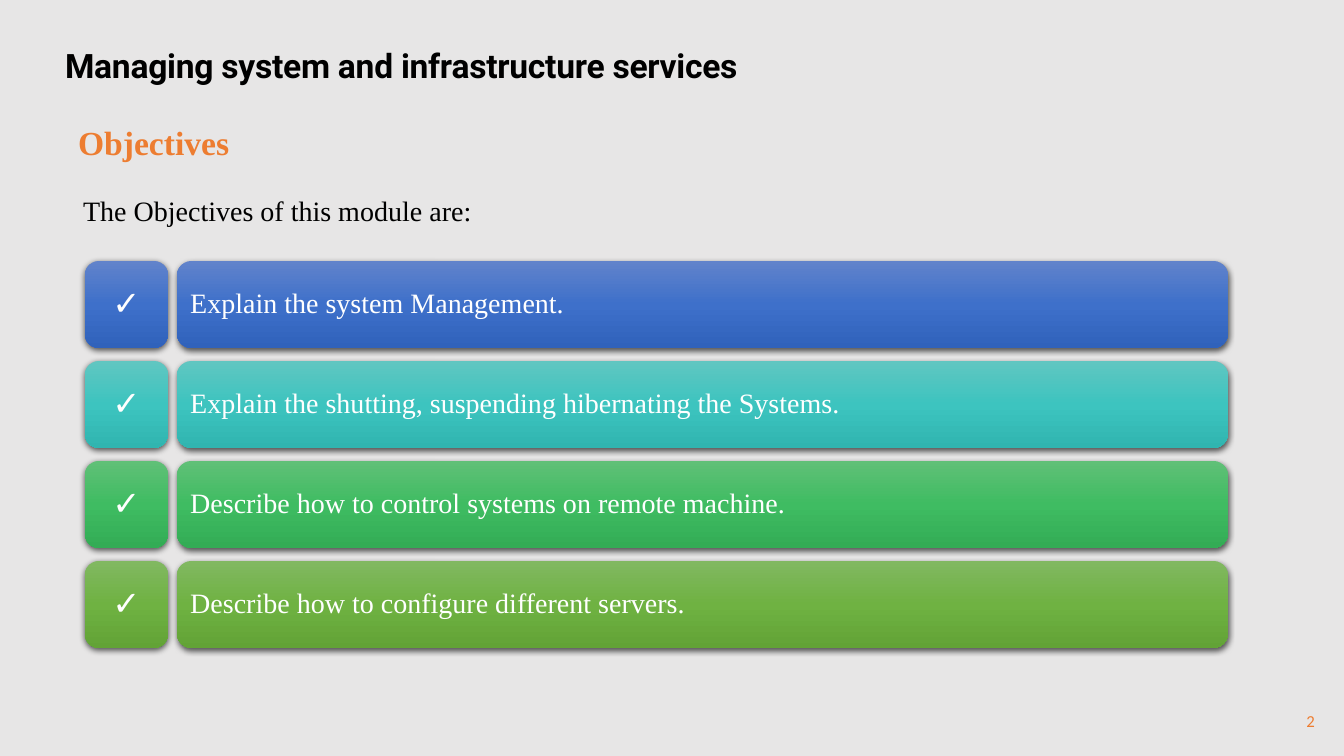
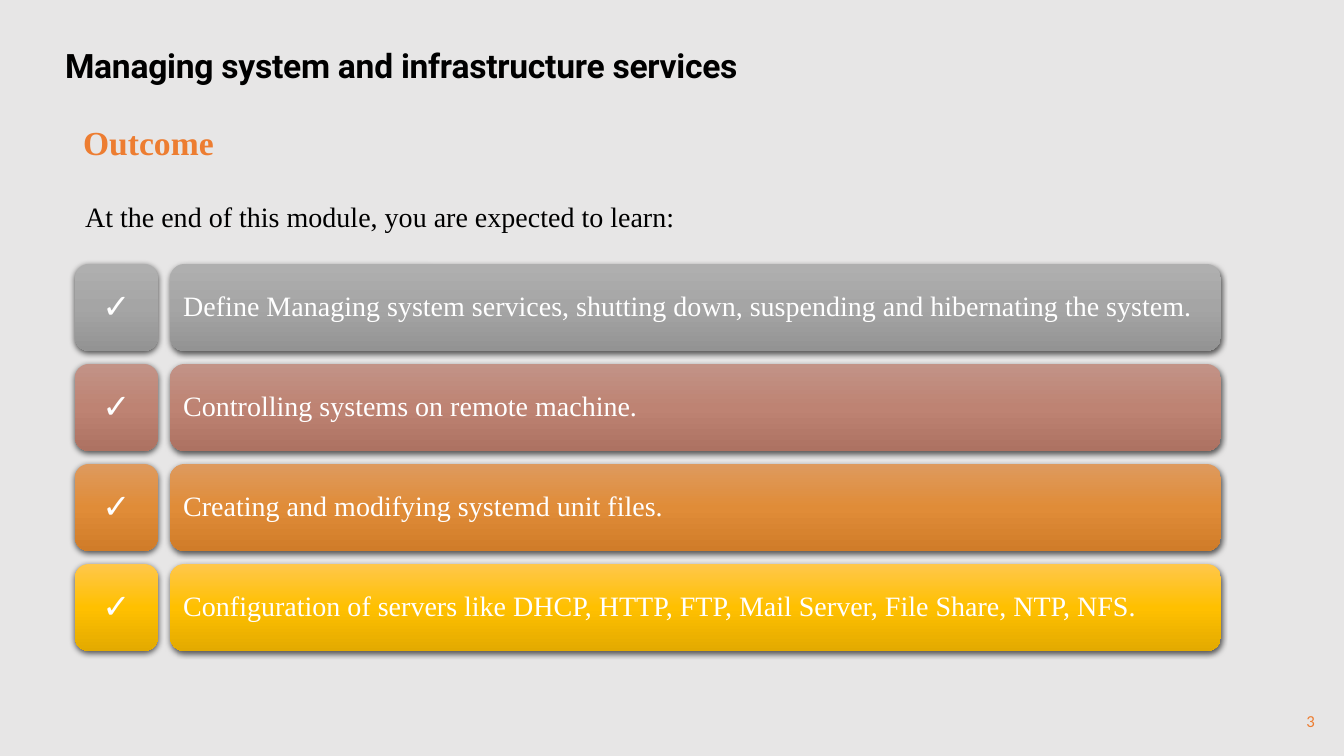
from copy import deepcopy
from dataclasses import dataclass

from lxml import etree
from pptx import Presentation
from pptx import util as u
from pptx.dml.color import RGBColor
from pptx.enum import shapes, text
from pptx.oxml.ns import qn

EMU_PER_PX = 12192000 / 1344
PAGE_WIDTH, PAGE_HEIGHT = 1344, 756
TWO_CONTENT_LAYOUT = 3

BACKGROUND = RGBColor(0xE7, 0xE6, 0xE6)
BLACK = RGBColor(0x00, 0x00, 0x00)
WHITE = RGBColor(0xFF, 0xFF, 0xFF)
ORANGE = RGBColor(0xED, 0x7D, 0x31)

TITLE = "Managing system and infrastructure services"
CHECK_MARK = "✓"
SERIF = "Times New Roman"

TILE_WIDTH, BAR_WIDTH = 83, 1051
ROW_HEIGHT, ROW_PITCH = 87, 100


@dataclass(frozen=True)
class Box:
    left: int
    top: int
    width: int
    height: int


@dataclass(frozen=True)
class TextStyle:
    name: str
    size: int
    color: RGBColor
    bold: bool = False
    align: text.PP_ALIGN = text.PP_ALIGN.LEFT
    anchor: text.MSO_ANCHOR = text.MSO_ANCHOR.TOP
    line_spacing: float = 1.0


@dataclass(frozen=True)
class Gradient:
    top: RGBColor
    middle: RGBColor
    bottom: RGBColor


@dataclass(frozen=True)
class Row:
    wording: str
    gradient: Gradient


@dataclass(frozen=True)
class Page:
    number: int
    heading: str
    heading_left: int
    intro: str
    intro_left: int
    intro_top: int
    tile_left: int
    bar_left: int
    rows_top: int
    rows: tuple[Row, ...]


TITLE_STYLE = TextStyle("Roboto", 24, BLACK, bold=True)
HEADING_STYLE = TextStyle(SERIF, 24, ORANGE, bold=True)
INTRO_STYLE = TextStyle(SERIF, 20, BLACK)
NUMBER_STYLE = TextStyle("Calibri", 12, ORANGE, align=text.PP_ALIGN.RIGHT,
                         anchor=text.MSO_ANCHOR.MIDDLE)
BAR_STYLE = TextStyle(SERIF, 20, WHITE, anchor=text.MSO_ANCHOR.MIDDLE,
                      line_spacing=0.9)
TILE_STYLE = TextStyle("Arial", 24, WHITE, bold=True, align=text.PP_ALIGN.CENTER,
                       anchor=text.MSO_ANCHOR.MIDDLE, line_spacing=0.9)


def gradient(top: str, middle: str, bottom: str) -> Gradient:
    return Gradient(*map(RGBColor.from_string, (top, middle, bottom)))


BLUE = gradient("6183CB", "3E70CA", "3062BB")
TEAL = gradient("60C6C1", "3DC4BF", "30B5B0")
GREEN = gradient("60C077", "3FBC62", "33AC55")
OLIVE = gradient("81B861", "6FB242", "62A336")
GREY = gradient("AFAFAF", "A5A5A5", "939393")
ROSE = gradient("C29387", "BE8373", "AD7262")
AMBER = gradient("DE9A5E", "E08C38", "D07C29")
GOLD = gradient("FFC74B", "FFC000", "E3AA00")

PAGES = (
    Page(2, "Objectives", 68, "The Objectives of this module are:", 73, 188,
         tile_left=85, bar_left=177, rows_top=261, rows=(
             Row("Explain the system Management.", BLUE),
             Row("Explain the shutting, suspending hibernating the Systems.", TEAL),
             Row("Describe how to control systems on remote machine.", GREEN),
             Row("Describe how to configure different servers.", OLIVE))),
    Page(3, "Outcome", 73,
         "At the end of this module, you are expected to learn:", 75, 194,
         tile_left=75, bar_left=170, rows_top=264, rows=(
             Row("Define Managing system services, shutting down, "
                 "suspending and hibernating the system.", GREY),
             Row("Controlling systems on remote machine.", ROSE),
             Row("Creating and modifying systemd unit files.", AMBER),
             Row("Configuration of servers like DHCP, HTTP, FTP, "
                 "Mail Server, File Share, NTP, NFS.", GOLD))),
)


def px(length: int) -> u.Emu:
    return u.Emu(round(length * EMU_PER_PX))


def bounds(box: Box) -> tuple[u.Emu, ...]:
    return px(box.left), px(box.top), px(box.width), px(box.height)


def place(shape, box: Box) -> None:
    shape.left, shape.top, shape.width, shape.height = bounds(box)


def write(shape, wording: str, style: TextStyle):
    """Fill the shape with one formatted, unbulleted paragraph and return it."""
    frame = shape.text_frame
    frame.word_wrap = True
    frame.auto_size = text.MSO_AUTO_SIZE.NONE
    frame.vertical_anchor = style.anchor
    frame.text = wording
    para = frame.paragraphs[0]
    properties = para._p.get_or_add_pPr()
    properties.set("marL", "0")
    properties.set("indent", "0")
    etree.SubElement(properties, qn("a:buNone"))
    para.alignment = style.align
    para.line_spacing = style.line_spacing
    para.space_before = u.Pt(0)
    para.font.name = style.name
    para.font.size = u.Pt(style.size)
    para.font.bold = style.bold
    para.font.color.rgb = style.color
    return para


def fill_gradient(shape, colors: Gradient) -> None:
    shape.fill.gradient()
    shape.fill.gradient_angle = 270
    first_stop = shape._element.spPr.find(".//" + qn("a:gs"))
    first_stop.addnext(deepcopy(first_stop))
    stops = zip(shape.fill.gradient_stops, (0, 0.5, 1),
                (colors.top, colors.middle, colors.bottom))
    for stop, position, color in stops:
        stop.position = position
        stop.color.rgb = color


def drop_shadow(shape) -> None:
    shape.shadow.inherit = False
    effects = shape._element.spPr.find(qn("a:effectLst"))
    shadow = etree.SubElement(
        effects, qn("a:outerShdw"), blurRad=str(u.Pt(4.5)), dist=str(u.Pt(1.5)),
        dir="5400000", algn="ctr", rotWithShape="0")
    color = etree.SubElement(shadow, qn("a:srgbClr"), val="000000")
    etree.SubElement(color, qn("a:alpha"), val="63000")


def add_panel(slide, box: Box, colors: Gradient, wording: str,
              style: TextStyle, inset: int) -> None:
    panel = slide.shapes.add_shape(
        shapes.MSO_SHAPE.ROUNDED_RECTANGLE, *bounds(box))
    fill_gradient(panel, colors)
    panel.line.fill.background()
    drop_shadow(panel)
    frame = panel.text_frame
    frame.margin_left = frame.margin_right = px(inset)
    frame.margin_top = frame.margin_bottom = px(inset)
    write(panel, wording, style)


def add_page(deck, page: Page) -> None:
    slide = deck.slides.add_slide(deck.slide_layouts[TWO_CONTENT_LAYOUT])
    title, heading, intro = slide.placeholders

    place(title, Box(55, 40, 1130, 50))
    title_para = write(title, TITLE, TITLE_STYLE)
    title_para.runs[0]._r.get_or_add_rPr().set("spc", "-20")
    place(heading, Box(page.heading_left, 117, 860, 50))
    write(heading, page.heading, HEADING_STYLE)
    place(intro, Box(page.intro_left, page.intro_top, 1200, 50))
    write(intro, page.intro, INTRO_STYLE)

    for index, row in enumerate(page.rows):
        top = page.rows_top + index * ROW_PITCH
        add_panel(slide, Box(page.bar_left, top, BAR_WIDTH, ROW_HEIGHT),
                  row.gradient, row.wording, BAR_STYLE, inset=9)
        add_panel(slide, Box(page.tile_left, top, TILE_WIDTH, ROW_HEIGHT),
                  row.gradient, CHECK_MARK, TILE_STYLE, inset=10)

    number = slide.shapes.add_textbox(*bounds(Box(1278, 701, 47, 40)))
    write(number, str(page.number), NUMBER_STYLE)


def main() -> None:
    deck = Presentation()
    deck.slide_width, deck.slide_height = px(PAGE_WIDTH), px(PAGE_HEIGHT)
    background = deck.slide_master.background.fill
    background.solid()
    background.fore_color.rgb = BACKGROUND
    for page in PAGES:
        add_page(deck, page)
    deck.save("out.pptx")


if __name__ == "__main__":
    main()
